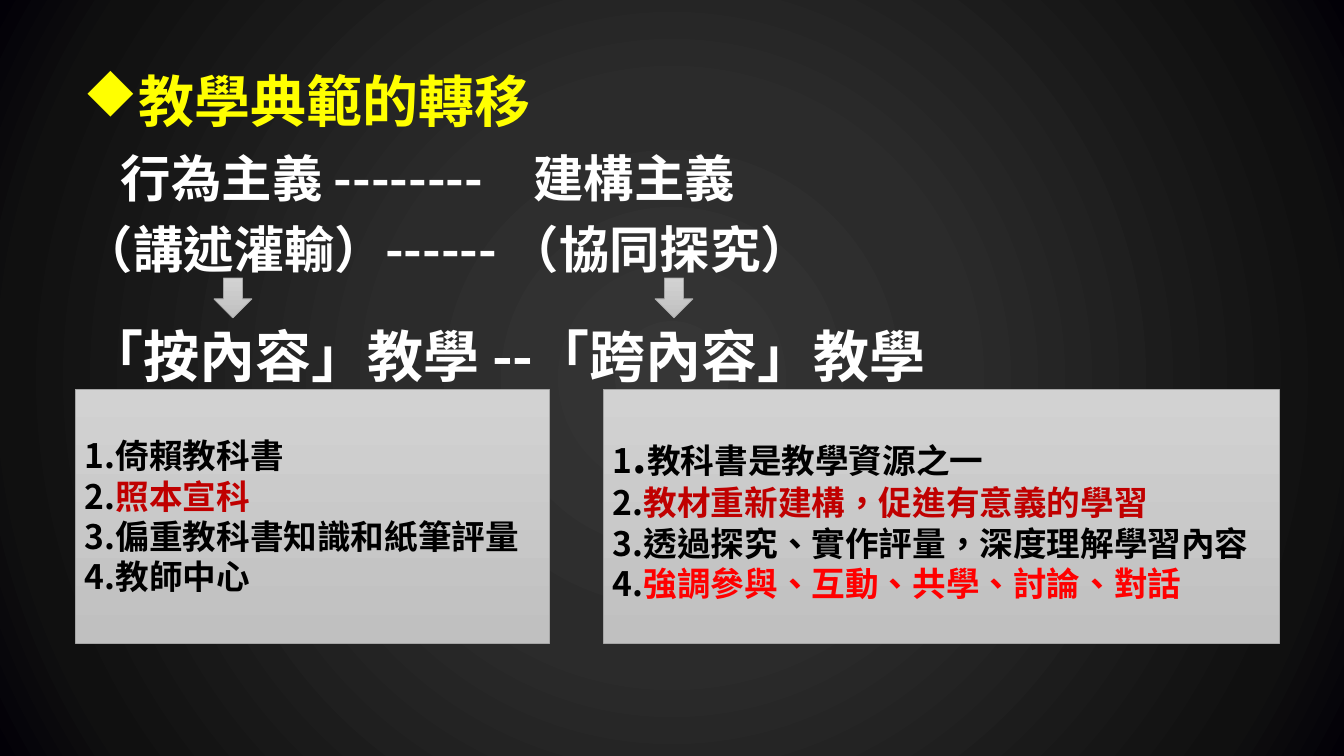
"""Build the slide on the shift of teaching paradigms."""
from dataclasses import dataclass

import pptx
import pptx.dml.color
import pptx.enum.lang
import pptx.enum.shapes
import pptx.enum.text
import pptx.oxml
import pptx.oxml.ns
import pptx.util
from lxml import etree

EMU_PER_PX = 914400 / 100.8
FONT = "Noto Sans CJK SC"
COLORS = {
    "title": "FFFF00", "light": "FFFFFF", "dark": "000000",
    "accent": "C00000", "strong": "FF0000",
    "panel_top": "D2D2D2", "panel_bottom": "C0C0C0", "outline": "A5A5A5",
}
BACKDROP = [(0, "363636"), (37, "2B2B2B"), (86, "101010"), (100, "020007")]


@dataclass
class Heading:
    text: str
    size: int
    color: str = "light"
    before: int = 0
    first_line: int = 0
    bullet: str = ""


@dataclass
class Words:
    text: str
    color: str = "dark"
    size: int = 24


@dataclass
class Panel:
    left: int
    width: int
    points: list[list[Words]]


HEADINGS = [
    Heading("教學典範的轉移", 40, "title", first_line=-56, bullet="u"),
    Heading("行為主義 --------　建構主義", 36, before=14, first_line=38),
    Heading("（講述灌輸）------ （協同探究）", 36, before=12),
    Heading("「按內容」教學 --「跨內容」教學", 40, before=35, first_line=5),
]
PANELS = [
    Panel(75, 474, [
        [Words("1.倚賴教科書")],
        [Words("2."), Words("照本宣科", "accent")],
        [Words("3.偏重教科書知識和紙筆評量")],
        [Words("4.教師中心")],
    ]),
    Panel(603, 676, [
        [Words("1"), Words(".", size=32), Words("教科書是教學資源之一")],
        [Words("2."), Words("教材重新建構，促進有意義的學習", "accent")],
        [Words("3.透過探究、實作評量，深度理解學習內容")],
        [Words("4."), Words("強調參與、互動、共學、討論、對話", "strong")],
    ]),
]
ARROW_LEFTS = [214, 655]


def px(length: int) -> int:
    """Turn px into EMU."""
    return round(length * EMU_PER_PX)


def rgb(name: str) -> pptx.dml.color.RGBColor:
    """Look up a colour by its role."""
    return pptx.dml.color.RGBColor.from_string(COLORS[name])


def add_child(parent, tag: str, **attributes: str):
    """Append one DrawingML element."""
    return etree.SubElement(parent, pptx.oxml.ns.qn(tag), attributes)


def style_paragraph(paragraph, size: int, color: str) -> None:
    """Set the bold font shared by a paragraph's runs."""
    font = paragraph.font
    font.size, font.bold, font.name = pptx.util.Pt(size), True, FONT
    font.color.rgb = rgb(color)
    add_child(paragraph._p.pPr.find(pptx.oxml.ns.qn("a:defRPr")), "a:ea", typeface=FONT)


def add_words(paragraph, text: str):
    """Add a run marked as Traditional Chinese."""
    run = paragraph.add_run()
    run.text = text
    run.font.language_id = pptx.enum.lang.MSO_LANGUAGE_ID.TRADITIONAL_CHINESE
    return run


def paint_backdrop(slide) -> None:
    """Give the slide its radial dark gradient."""
    slide.background.fill.gradient()
    gradient = next(slide.element.iter(pptx.oxml.ns.qn("a:gradFill")))
    for child in list(gradient):
        gradient.remove(child)
    stops = add_child(gradient, "a:gsLst")
    for percent, color in BACKDROP:
        stop = add_child(stops, "a:gs", pos=str(percent * 1000))
        add_child(stop, "a:srgbClr", val=color)
    circle = add_child(gradient, "a:path", path="circle")
    add_child(circle, "a:fillToRect", l="50000", t="50000", r="50000", b="50000")


def add_headings(slide) -> None:
    """Write the title and the contrasted terms."""
    frame = slide.shapes.add_textbox(px(73), px(69), px(1024), px(590)).text_frame
    frame.word_wrap = True
    for index, heading in enumerate(HEADINGS):
        paragraph = frame.paragraphs[0] if index == 0 else frame.add_paragraph()
        add_words(paragraph, heading.text)
        paragraph.line_spacing = 0.9
        if heading.before:
            paragraph.space_before = pptx.util.Pt(heading.before)
        properties = paragraph._p.get_or_add_pPr()
        properties.set("marL", str(px(max(0, -heading.first_line))))
        properties.set("indent", str(px(heading.first_line)))
        if heading.bullet:
            add_child(properties, "a:buFont", typeface="Wingdings", charset="2")
            add_child(properties, "a:buChar", char=heading.bullet)
        style_paragraph(paragraph, heading.size, heading.color)


def add_silver(slide, preset, left: int, top: int, width: int, height: int):
    """Add a preset shape with the silver gradient."""
    shape = slide.shapes.add_shape(preset, px(left), px(top), px(width), px(height))
    shape.shadow.inherit = False
    shape.fill.gradient()
    shape.fill.gradient_angle = 270
    for stop, color in zip(shape.fill.gradient_stops, ("panel_top", "panel_bottom")):
        stop.color.rgb = rgb(color)
    shape.line.color.rgb = rgb("outline")
    shape.line.width = pptx.util.Pt(0.5)
    return shape


def add_panel(slide, panel: Panel) -> None:
    """Add a panel of numbered points."""
    preset = pptx.enum.shapes.MSO_SHAPE.RECTANGLE
    frame = add_silver(slide, preset, panel.left, 389, panel.width, 254).text_frame
    frame.word_wrap = True
    frame.vertical_anchor = pptx.enum.text.MSO_ANCHOR.MIDDLE
    for index, point in enumerate(panel.points):
        paragraph = frame.paragraphs[0] if index == 0 else frame.add_paragraph()
        paragraph.alignment = pptx.enum.text.PP_ALIGN.LEFT
        style_paragraph(paragraph, 24, "dark")
        for words in point:
            run = add_words(paragraph, words.text)
            if words.color != "dark":
                run.font.color.rgb = rgb(words.color)
            if words.size != 24:
                run.font.size = pptx.util.Pt(words.size)


def main() -> None:
    """Assemble and save the slide."""
    deck = pptx.Presentation()
    deck.slide_width, deck.slide_height = px(1344), px(756)
    slide = deck.slides.add_slide(deck.slide_layouts[6])
    paint_backdrop(slide)
    add_headings(slide)
    for left in ARROW_LEFTS:
        add_silver(slide, pptx.enum.shapes.MSO_SHAPE.DOWN_ARROW, left, 278, 38, 40)
    for panel in PANELS:
        add_panel(slide, panel)
    deck.save("out.pptx")


if __name__ == "__main__":
    main()
